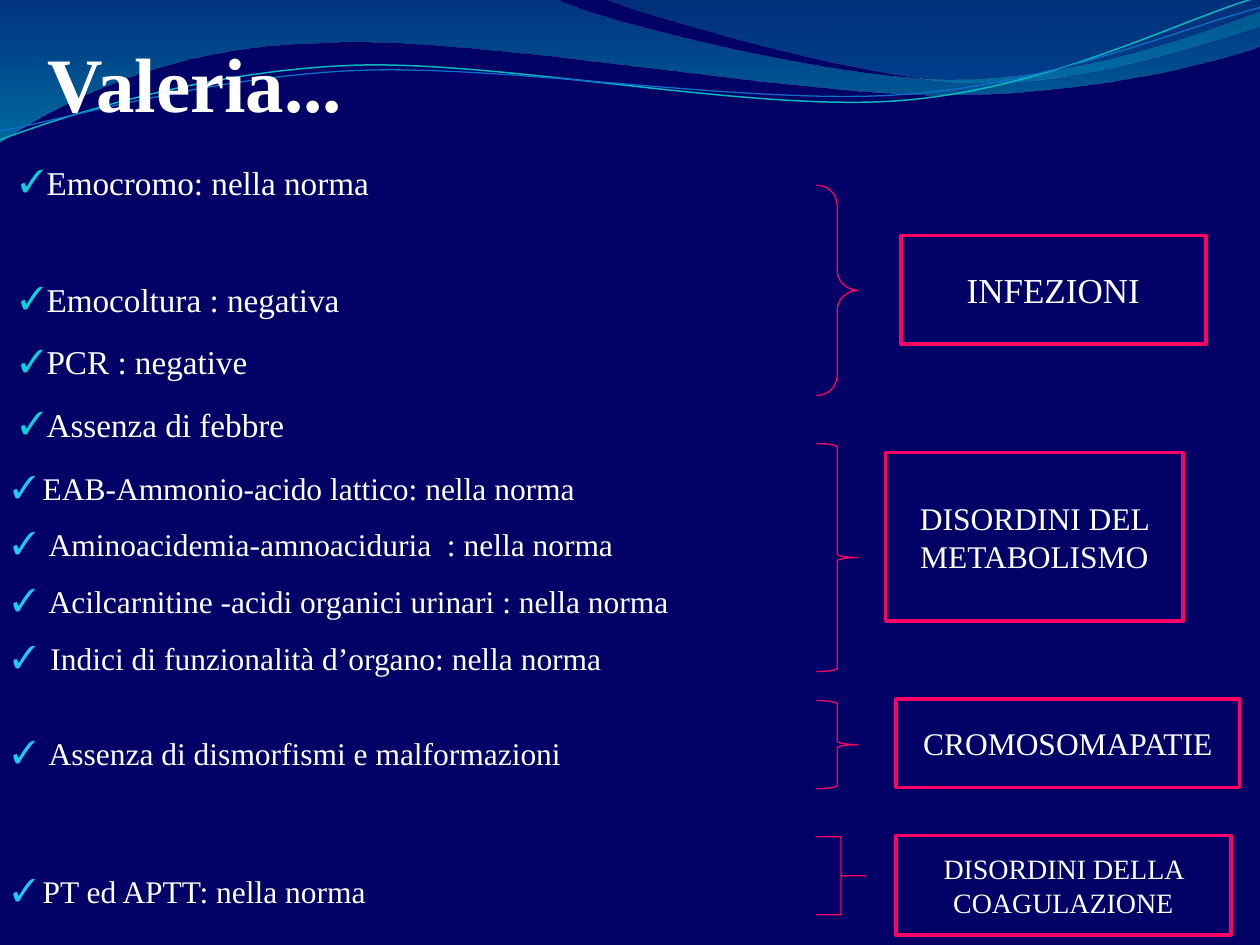
from dataclasses import dataclass
from lxml.etree import SubElement as Sub
from pptx import Presentation
from pptx.dml.color import RGBColor as Rgb
from pptx.enum.shapes import MSO_SHAPE as Shape
from pptx.enum.text import MSO_ANCHOR as Anchor, MSO_AUTO_SIZE as Fit, PP_ALIGN as Align
from pptx.oxml.ns import qn
from pptx.util import Inches, Pt


@dataclass(frozen=True)
class Theme:
    font: str = "Times New Roman"
    back: str = "000066"
    ink: str = "FFFFFF"
    pink: str = "FF0066"
    tick: str = "20C9F8"
    teal: str = "0BD0D9"
    title: int = 44
    lead: int = 19
    body: int = 18


THEME = Theme()

# Ribbons: start point, then segments (2 numbers: line, 6 numbers: curve), gradient stops
RIBBONS = [
    ((0, 0),
     [(4.4, -0.01), (4.76, 0.17, 6.64, 0.63, 7.58, 0.63), (8.53, 0.63, 9.58, 0.26, 10, 0.09),
      (10.01, 0.36), (9.83, 0.44, 8.7, 0.76, 7.46, 0.75), (6.22, 0.75, 3.82, 0.28, 2.57, 0.34),
      (1.29, 0.36, 0.46, 0.83, -0.01, 1.13), (0, 0)],
     [("0074A1", 45), ("00C6CF", 55)]),
    ((4.79, -0.01),
     [(5.09, 0.11, 6.82, 0.62, 7.69, 0.65), (8.56, 0.69, 9.61, 0.32, 10, 0.21), (10, 0),
      (4.79, -0.01)],
     [("00A1A9", 30), ("008BBF", 45)]),
]

# Waves: start point, segments, colour, width
WAVES = [
    ((0, 1.11),
     [(0.48, 0.93, 1.58, 0.57, 2.77, 0.52), (3.95, 0.47, 5.93, 0.89, 7.13, 0.8),
      (8.33, 0.71, 9.38, 0.15, 9.98, -0.02)], "0AB8BF", 0.85),
    ((0, 1.04),
     [(0.47, 0.96, 1.64, 0.61, 2.83, 0.56), (4.03, 0.51, 5.97, 0.84, 7.17, 0.75),
      (8.36, 0.67, 9.41, 0.21, 10, 0.06)], "0F6FC6", 0.75),
]

# Groups: brace place, brace adjustments, box place, label, type size
GROUPS = [
    ((6.48, 1.47, 0.33, 1.67), (0.48, 0.5), (7.15, 1.87, 2.42, 0.86), "INFEZIONI", 20),
    ((6.48, 3.52, 0.33, 1.81), (), (7.03, 3.59, 2.36, 1.34), "DISORDINI DEL METABOLISMO", 18),
    ((6.48, 5.56, 0.33, 0.7), (), (7.11, 5.55, 2.73, 0.7), "CROMOSOMAPATIE", 18),
    ((6.48, 6.64, 0.39, 0.62), (0, 0.5), (7.11, 6.63, 2.66, 0.79),
     "DISORDINI DELLA COAGULAZIONE", 16),
]

LEADS = ["Emocromo: nella norma", "Emocoltura : negativa", "PCR : negative", "Assenza di febbre"]

# Check lists: place, items
CHECKS = [
    ((0, 3.52, 6.33, 1.92),
     ["EAB-Ammonio-acido lattico: nella norma",
      " Aminoacidemia-amnoaciduria  : nella norma",
      " Acilcarnitine -acidi organici urinari : nella norma",
      " Indici di funzionalità d’organo: nella norma"]),
    ((0, 5.63, 6.33, 0.5), [" Assenza di dismorfismi e malformazioni"]),
    ((0, 6.72, 6.25, 0.5), ["PT ed APTT: nella norma"]),
]


def place(nums):
    return [Inches(n) for n in nums]


def add_path(slide, start, segs, close):
    """Draw every point as a line end, then join each curve's three points."""
    pen = slide.shapes.build_freeform(*place(start), scale=1.0)
    for seg in segs:
        nums = place(seg)
        pen.add_line_segments(list(zip(nums[::2], nums[1::2])), close=False)
    if close:
        pen.add_line_segments([], close=True)
    shape = pen.convert_to_shape()
    shape.shadow.inherit = False

    lines = iter(list(shape._element.iter(qn("a:lnTo"))))
    for seg in segs:
        first = next(lines)
        if len(seg) == 6:
            first.tag = qn("a:cubicBezTo")
            for _ in range(2):
                node = next(lines)
                first.append(node[0])
                node.getparent().remove(node)
    return shape


def add_ribbon(slide, start, segs, stops):
    shape = add_path(slide, start, segs, True)
    shape.line.fill.background()
    shape.fill.gradient()
    shape.fill.gradient_angle = 270
    for stop, (tone, alpha) in zip(shape.fill.gradient_stops, stops):
        stop.color.rgb = Rgb.from_string(tone)
    for node, (tone, alpha) in zip(shape._element.iter(qn("a:srgbClr")), stops):
        Sub(node, qn("a:alpha"), val=str(alpha * 1000))


def outline(shape, tone, width):
    shape.shadow.inherit = False
    shape.fill.background()
    shape.line.color.rgb = Rgb.from_string(tone)
    shape.line.width = Pt(width)


def add_run(para, text, size, bold=False):
    run = para.add_run()
    run.text = text
    run.font.name = THEME.font
    run.font.size = Pt(size)
    run.font.bold = bold
    run.font.color.rgb = Rgb.from_string(THEME.ink)


def add_brace(slide, at, adjs):
    brace = slide.shapes.add_shape(Shape.RIGHT_BRACE, *place(at))
    for i, adj in enumerate(adjs):
        brace.adjustments[i] = adj
    outline(brace, THEME.pink, 0.75)


def add_box(slide, at, label, size):
    box = slide.shapes.add_shape(Shape.RECTANGLE, *place(at))
    outline(box, THEME.pink, 2)
    box.text_frame.vertical_anchor = Anchor.MIDDLE
    para = box.text_frame.paragraphs[0]
    para.alignment = Align.CENTER
    add_run(para, label, size)


def add_text(slide, at):
    frame = slide.shapes.add_textbox(*place(at)).text_frame
    frame.word_wrap = True
    return frame


def add_tick(para, tone, indent, scale):
    props = para._p.get_or_add_pPr()
    props.set("marL", str(Inches(indent)))
    props.set("indent", str(-Inches(indent)))
    Sub(Sub(props, qn("a:buClr")), qn("a:srgbClr"), val=tone)
    Sub(props, qn("a:buSzPct"), val=str(scale * 1000))
    Sub(props, qn("a:buFont"), typeface=THEME.font)
    Sub(props, qn("a:buChar"), char="✓")


def add_list(frame, items, size, tone, spacing, gaps, indent, scale=100):
    for i, (item, gap) in enumerate(zip(items, gaps)):
        para = frame.add_paragraph() if i else frame.paragraphs[0]
        para.line_spacing = spacing
        para.space_before = Pt(gap)
        add_tick(para, tone, indent, scale)
        add_run(para, item, size)


def main():
    deck = Presentation()
    deck.slide_width, deck.slide_height = Inches(10), Inches(7.5)
    slide = deck.slides.add_slide(deck.slide_layouts[6])

    # Backdrop
    slide.background.fill.solid()
    slide.background.fill.fore_color.rgb = Rgb.from_string(THEME.back)
    for ribbon in RIBBONS:
        add_ribbon(slide, *ribbon)
    for start, segs, tone, width in WAVES:
        outline(add_path(slide, start, segs, False), tone, width)

    # First findings, the top one set apart
    frame = add_text(slide, (0.16, 0.76, 6.25, 2.45))
    frame.margin_left, frame.margin_top, frame.margin_right = place((0, 0.4, 0.02))
    add_list(frame, LEADS, THEME.lead, THEME.teal, 1.4, (0, 35.1, 3.8, 3.8), 0.21, 95)

    # Braces and the disorders they rule out
    for brace, adjs, box, label, size in GROUPS:
        add_brace(slide, brace, adjs)
        add_box(slide, box, label, size)

    # Title
    frame = add_text(slide, (0.28, 0.23, 2.83, 0.84))
    frame.auto_size = Fit.SHAPE_TO_FIT_TEXT
    add_run(frame.paragraphs[0], "Valeria...", THEME.title, bold=True)

    # Other findings
    for at, items in CHECKS:
        frame = add_text(slide, at)
        frame.auto_size = Fit.SHAPE_TO_FIT_TEXT
        add_list(frame, items, THEME.body, THEME.tick, 1.5, [0] * len(items), 0.24)

    deck.save("out.pptx")


if __name__ == "__main__":
    main()
